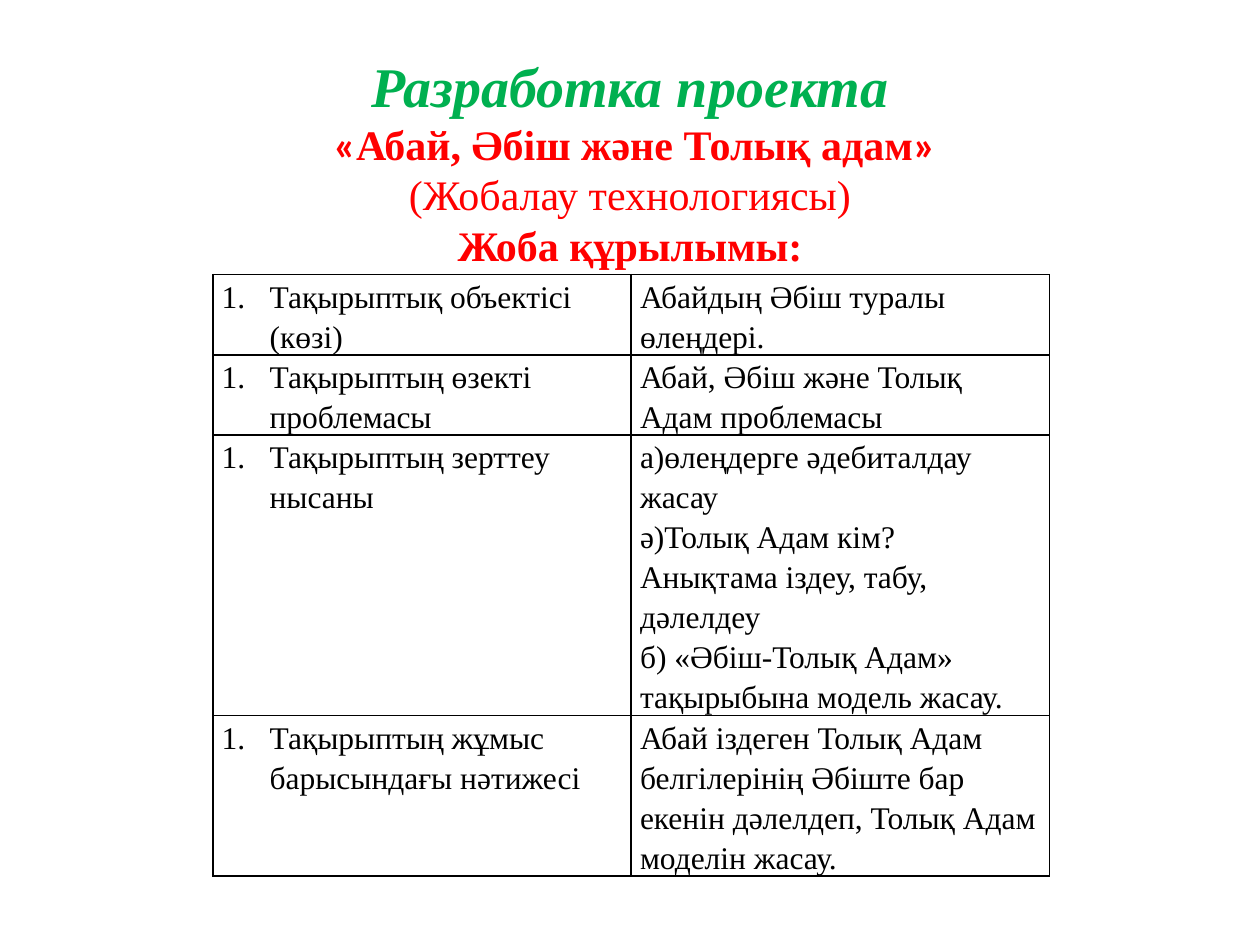
from lxml.etree import SubElement as Sub
from pptx import Presentation
from pptx.dml.color import RGBColor as Rgb
from pptx.enum.text import MSO_ANCHOR as Anchor, MSO_AUTO_SIZE as Auto, PP_ALIGN as Align
from pptx.oxml.ns import qn
from pptx.util import Inches, Pt

HUES = {"green": "00B050", "red": "FF0000", "black": "000000"}
SERIF, SANS = "Times New Roman", "Calibri"

# Heading lines: runs of (text, font, size, hue, bold, italic)
HEAD = [
    [("Разработка проекта", SERIF, 32, "green", True, True)],
    [(" «", SANS, 24, "red", True, False),
     ("Абай, Әбіш және Толық адам", SERIF, 24, "red", True, False),
     ("»", SANS, 24, "red", True, False)],
    [("(Жобалау технологиясы)", SERIF, 24, "red", False, False)],
    [("Жоба құрылымы:", SERIF, 24, "red", True, False)],
]

# Table rows: (numbered topic, paragraphs of the answer, lines of text)
ROWS = [
    ("Тақырыптық объектісі (көзі)", ["Абайдың Әбіш туралы өлеңдері."], 2),
    ("Тақырыптың өзекті проблемасы", ["Абай, Әбіш және Толық Адам проблемасы"], 2),
    ("Тақырыптың зерттеу нысаны",
     ["а)өлеңдерге әдебиталдау жасау",
      "ә)Толық Адам кім? Анықтама іздеу, табу, дәлелдеу",
      "б) «Әбіш-Толық Адам» тақырыбына модель жасау."], 7),
    ("Тақырыптың жұмыс барысындағы нәтижесі",
     ["Абай іздеген Толық Адам белгілерінің Әбіште бар екенін дәлелдеп, "
      "Толық Адам моделін жасау."], 4),
]
LEFT, TOP, COL, LINE = 1.69, 2.18, 3.32, 0.31


def style(run, face, size, hue, bold=False, slant=False):
    font = run.font
    font.name, font.size, font.bold, font.italic = face, Pt(size), bold, slant
    font.color.rgb = Rgb.from_string(HUES[hue])


def number(para):
    props = para._p.get_or_add_pPr()
    props.set("marL", str(Inches(0.38)))
    props.set("indent", str(-Inches(0.38)))
    Sub(props, qn("a:buFont"), typeface="+mj-lt")
    Sub(props, qn("a:buAutoNum"), type="arabicPeriod")


def border(cell):
    props = cell._tc.get_or_add_tcPr()
    for side in ("lnL", "lnR", "lnT", "lnB"):
        line = Sub(props, qn("a:" + side), w=str(Pt(1)))
        fill = Sub(line, qn("a:solidFill"))
        Sub(fill, qn("a:srgbClr"), val=HUES["black"])


def write(cell, texts, listed=False):
    cell.margin_left = cell.margin_right = Inches(0.07)
    cell.margin_top = cell.margin_bottom = 0
    border(cell)
    cell.fill.background()
    frame = cell.text_frame
    frame.text = "\n".join(texts)
    for para in frame.paragraphs:
        para.line_spacing = 1.15
        if listed:
            number(para)
        for run in para.runs:
            style(run, SERIF, 18, "black")


def main():
    deck = Presentation()
    deck.slide_width, deck.slide_height = Inches(10), Inches(7.5)
    slide = deck.slides.add_slide(deck.slide_layouts[5])

    # Heading
    title = slide.shapes.title
    title.left, title.top = 0, Inches(0.38)
    title.width, title.height = Inches(10), Inches(1.81)
    frame = title.text_frame
    frame.auto_size, frame.word_wrap = Auto.NONE, True
    frame.vertical_anchor = Anchor.BOTTOM
    for i, parts in enumerate(HEAD):
        para = frame.paragraphs[0] if i == 0 else frame.add_paragraph()
        para.alignment = Align.CENTER
        for text, *look in parts:
            run = para.add_run()
            run.text = text
            style(run, *look)

    # Project table
    total = sum(row[2] for row in ROWS)
    table = slide.shapes.add_table(
        len(ROWS), 2, Inches(LEFT), Inches(TOP),
        Inches(2 * COL), Inches(LINE * total)).table
    table.first_row = table.horz_banding = False
    for col in table.columns:
        col.width = Inches(COL)
    for i, (topic, answer, lines) in enumerate(ROWS):
        table.rows[i].height = Inches(LINE * lines)
        write(table.cell(i, 0), [topic], listed=True)
        write(table.cell(i, 1), answer)

    deck.save("out.pptx")


if __name__ == "__main__":
    main()
